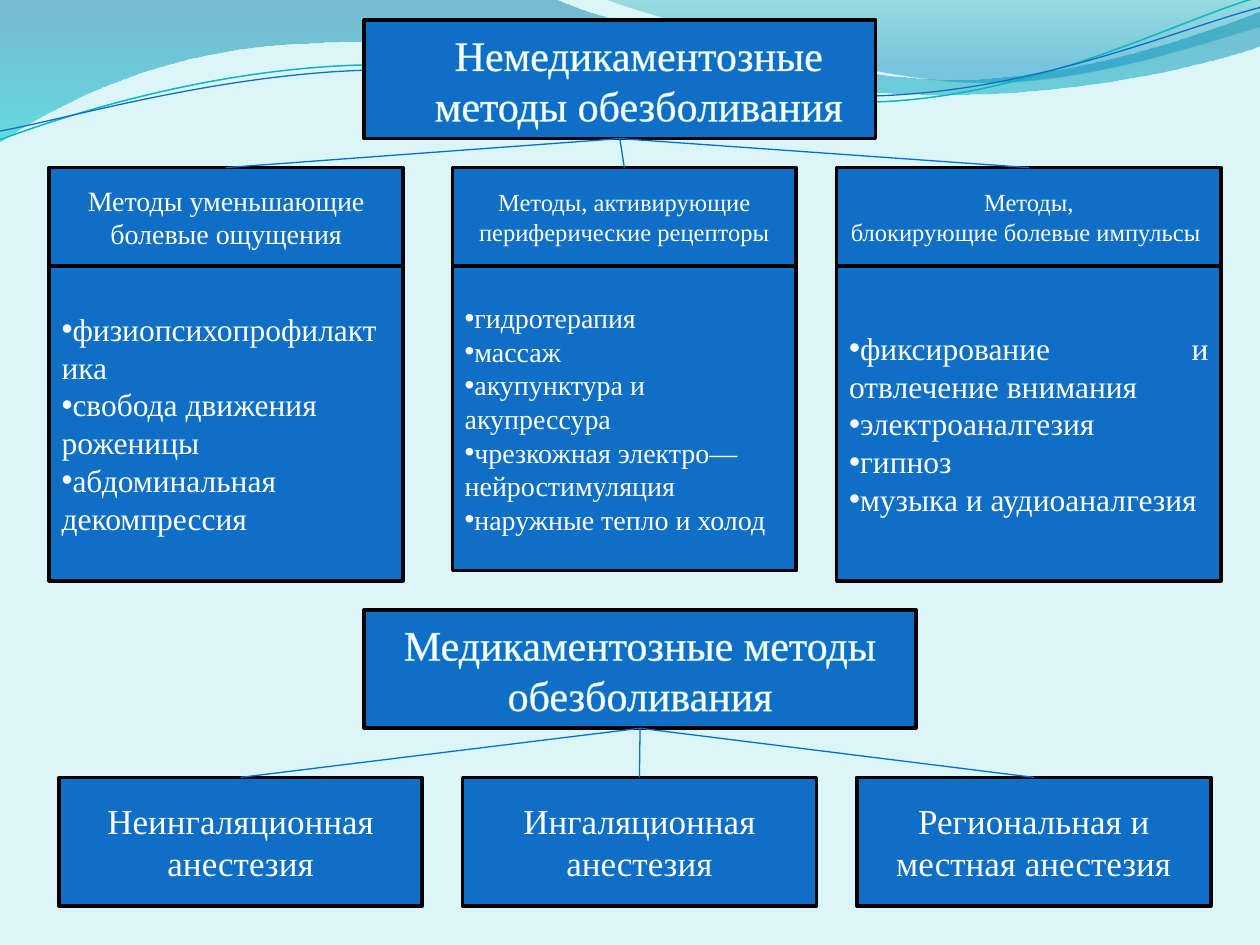
import pptx
import pptx.dml.color
import pptx.enum.shapes
import pptx.enum.text
import pptx.oxml
import pptx.oxml.ns
import pptx.util
from lxml import etree

Inches = pptx.util.Inches
Pt = pptx.util.Pt
ALIGN = pptx.enum.text.PP_ALIGN
qn = pptx.oxml.ns.qn

COLORS = {
    "page": "DBF5F9", "box": "0F6FC6", "border": "000000", "text": "FFFFFF",
    "glow": "B3EAF2", "link": "0070D5", "teal": "0AB8BF",
    "deep": "0074A1", "aqua": "00C6CF", "sea": "00A1A9", "sky": "008BBF",
}


def rgb(name):
    return pptx.dml.color.RGBColor.from_string(COLORS[name])


class Deck:
    font = "Times New Roman"

    def __init__(self, prs):
        # The Section Header layout has a plain body placeholder
        self.s = prs.slides.add_slide(prs.slide_layouts[2])
        self.s.background.fill.solid()
        self.s.background.fill.fore_color.rgb = rgb("page")
        title = self.s.shapes.title._element
        title.getparent().remove(title)

    def wave(self, start, steps, color=None, width=None, stops=None):
        """A step is a line (x, y) or a Bezier curve (x1, y1, x2, y2, x, y)."""
        builder = self.s.shapes.build_freeform(Inches(start[0]), Inches(start[1]))
        builder.add_line_segments([(Inches(step[-2]), Inches(step[-1]))
                                   for step in steps], close=stops is not None)
        sp = builder.convert_to_shape()
        sp.shadow.inherit = False
        # Turn the segments that have control points into curves
        segments = list(sp._element.iter(qn("a:lnTo")))
        for segment, step in zip(segments, steps):
            if len(step) == 2:
                continue
            curve = etree.Element(qn("a:cubicBezTo"))
            for x, y in zip(step[::2], step[1::2]):
                etree.SubElement(curve, qn("a:pt"), x=str(Inches(x) - sp.left),
                                 y=str(Inches(y) - sp.top))
            segment.getparent().replace(segment, curve)
        if stops is None:
            sp.fill.background()
            sp.line.color.rgb = rgb(color)
            sp.line.width = Pt(width)
            return
        sp.line.fill.background()
        sp.fill.gradient()
        sp.fill.gradient_angle = 270
        for stop, (position, name, opacity) in zip(sp.fill.gradient_stops, stops):
            stop.position = position
            stop.color.rgb = rgb(name)
            clr = stop._gs.find(qn("a:srgbClr"))
            etree.SubElement(clr, qn("a:alpha")).set("val", str(opacity * 1000))

    def style(self, sp, size, align):
        sp.fill.solid()
        sp.fill.fore_color.rgb = rgb("box")
        sp.line.color.rgb = rgb("border")
        sp.line.width = Pt(2)
        tf = sp.text_frame
        tf.word_wrap = True
        tf.auto_size = pptx.enum.text.MSO_AUTO_SIZE.NONE
        tf.vertical_anchor = pptx.enum.text.MSO_ANCHOR.MIDDLE
        for p in tf.paragraphs:
            p.alignment = align
            for r in p.runs:
                r.font.name = self.font
                r.font.size = Pt(size)
                r.font.color.rgb = rgb("text")

    def box(self, at, text, size, align=ALIGN.CENTER):
        sp = self.s.shapes.add_shape(pptx.enum.shapes.MSO_SHAPE.RECTANGLE,
                                     *[Inches(v) for v in at])
        sp.shadow.inherit = False
        sp.text_frame.text = text
        self.style(sp, size, align)
        return sp

    def bullets(self, at, items, size, align=ALIGN.LEFT):
        sp = self.box(at, "\n".join(items), size, align)
        for p in sp.text_frame.paragraphs:
            pPr = p._p.get_or_add_pPr()
            etree.SubElement(pPr, qn("a:buFont")).set("typeface", "Arial")
            etree.SubElement(pPr, qn("a:buChar")).set("char", "•")

    def body(self, at, text, size):
        sp = self.s.placeholders[1]
        sp.left, sp.top, sp.width, sp.height = [Inches(v) for v in at]
        sp.text_frame.text = text
        self.style(sp, size, ALIGN.CENTER)
        pPr = sp.text_frame.paragraphs[0]._p.get_or_add_pPr()
        pPr.set("marL", str(Inches(0.3)))
        self.s.shapes._spTree.append(sp._element)  # above the waves
        return sp

    def outline(self, sp):
        for r in sp.text_frame.paragraphs[0].runs:
            ln = etree.Element(qn("a:ln"), w=str(Pt(0.75)))
            fill = etree.SubElement(ln, qn("a:solidFill"))
            etree.SubElement(fill, qn("a:srgbClr")).set("val", COLORS["glow"])
            r.font._element.insert(0, ln)

    def link(self, parent, child):
        line = self.s.shapes.add_connector(
            pptx.enum.shapes.MSO_CONNECTOR.STRAIGHT, 0, 0, 0, 0)
        line.begin_connect(parent, 2)
        line.end_connect(child, 0)
        line.line.color.rgb = rgb("link")
        line.line.width = Pt(0.75)
        etree.SubElement(line._element.spPr, qn("a:effectLst"))


def main():
    prs = pptx.Presentation()
    prs.slide_width, prs.slide_height = Inches(10), Inches(7.5)
    deck = Deck(prs)

    # Background waves
    deck.wave((0, 0), [
        (4.4, -0.01), (4.76, 0.17, 6.64, 0.63, 7.58, 0.63),
        (8.53, 0.63, 9.58, 0.26, 10, 0.09), (10.01, 0.36),
        (9.83, 0.44, 8.7, 0.76, 7.46, 0.75), (6.22, 0.75, 3.82, 0.28, 2.57, 0.34),
        (1.29, 0.36, 0.46, 0.83, -0.01, 1.13), (0, 0),
    ], stops=[(0, "deep", 45), (1, "aqua", 55)])
    deck.wave((4.79, -0.01), [
        (5.09, 0.11, 6.82, 0.62, 7.69, 0.65), (8.56, 0.69, 9.61, 0.32, 10, 0.21),
        (10, 0), (4.79, -0.01),
    ], stops=[(0, "sea", 30), (0.8, "sky", 45)])
    deck.wave((0, 1.11), [
        (0.48, 0.93, 1.58, 0.57, 2.77, 0.52), (3.95, 0.47, 5.93, 0.89, 7.13, 0.8),
        (8.33, 0.71, 9.38, 0.15, 9.98, -0.02),
    ], color="teal", width=0.85)
    deck.wave((0, 1.04), [
        (0.47, 0.96, 1.64, 0.61, 2.83, 0.56), (4.03, 0.51, 5.97, 0.84, 7.17, 0.75),
        (8.36, 0.67, 9.41, 0.21, 10, 0.06),
    ], color="box", width=0.75)

    # Headings
    non_drug = deck.body((2.89, 0.16, 4.06, 0.94),
                         "Немедикаментозные методы обезболивания", 24)
    drug = deck.box((2.89, 4.84, 4.38, 0.94),
                    "Медикаментозные методы обезболивания", 24)
    for heading in (non_drug, drug):
        deck.outline(heading)

    # Non-drug methods: left, width, head, head size, list height, size, align, items
    columns = [
        (0.39, 2.81, "Методы уменьшающие болевые ощущения", 16, 2.5, 18, ALIGN.LEFT,
         ["физиопсихопрофилактика", "свобода движения роженицы",
          "абдоминальная декомпрессия"]),
        (3.59, 2.73, "Методы, активирующие периферические рецепторы", 14,
         2.42, 16, ALIGN.LEFT,
         ["гидротерапия", "массаж", "акупунктура и акупрессура",
          "чрезкожная электро—нейростимуляция", "наружные тепло и холод"]),
        (6.64, 3.05, "Методы,\nблокирующие болевые импульсы ", 14,
         2.5, 18, ALIGN.JUSTIFY,
         ["фиксирование и отвлечение внимания", "электроаналгезия", "гипноз",
          "музыка и аудиоаналгезия"]),
    ]
    for left, width, head, head_size, height, size, align, items in columns:
        group = deck.box((left, 1.33, width, 0.78), head, head_size)
        deck.bullets((left, 2.11, width, height), items, size, align)
        deck.link(non_drug, group)

    # Drug methods
    for left, width, text in [
        (0.47, 2.88, "Неингаляционная анестезия"),
        (3.67, 2.81, "Ингаляционная анестезия"),
        (6.8, 2.81, "Региональная и местная анестезия"),
    ]:
        deck.link(drug, deck.box((left, 6.17, width, 1.02), text, 20))

    prs.save("out.pptx")


if __name__ == "__main__":
    main()
